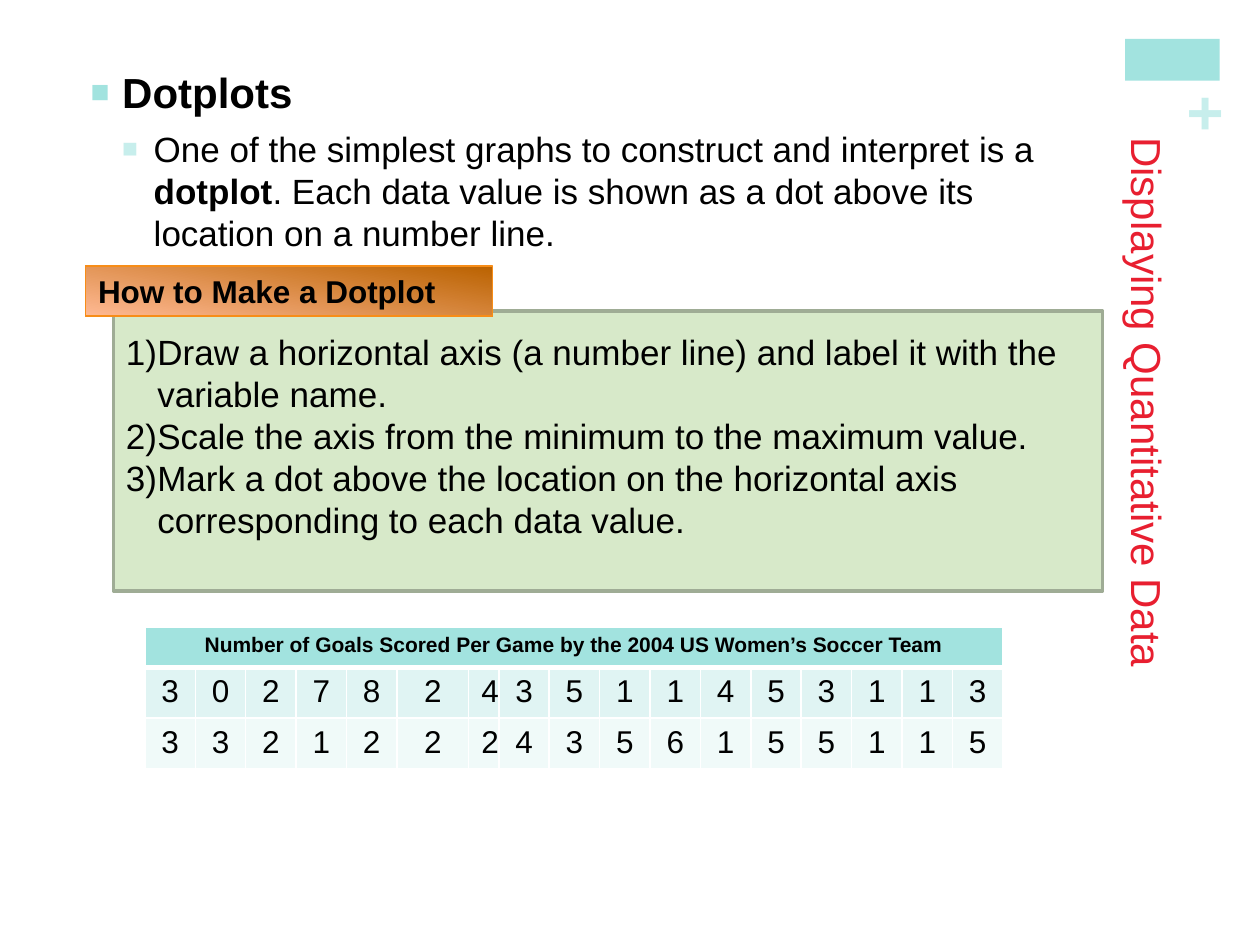
from lxml import etree
from pptx import Presentation
from pptx.dml.color import RGBColor
from pptx.enum.shapes import MSO_SHAPE
from pptx.enum.text import MSO_ANCHOR, MSO_AUTO_SIZE, PP_ALIGN
from pptx.oxml.ns import qn
from pptx.util import Pt

PX = 9144
FONT = "Arial"
RECT = MSO_SHAPE.RECTANGLE
LEFT, MID = PP_ALIGN.LEFT, PP_ALIGN.CENTER
TOP, CENTER = MSO_ANCHOR.TOP, MSO_ANCHOR.MIDDLE
FIXED = MSO_AUTO_SIZE.NONE

HEX = {
    "black": "000000", "white": "FFFFFF", "red": "E81F30",
    "teal": "A2E3DF", "pale": "C7EEEC", "band": "E0F4F3", "mist": "F0FAF9",
    "green": "D7E9C9", "moss": "9FAC95",
    "rust": "BA6200", "peach": "FFB993", "orange": "F78D18",
}
STEPS = [
    "Draw a horizontal axis (a number line) and label it with the variable name.",
    "Scale the axis from the minimum to the maximum value.",
    "Mark a dot above the location on the horizontal axis corresponding to each data value.",
]
GOALS = ["30278243511453113", "33212224356155115"]


def rgb(name):
    return RGBColor.from_string(HEX[name])


def emu(*box):
    return [n * PX for n in box]


def place(shape, box):
    shape.left, shape.top, shape.width, shape.height = emu(*box)


def style(para, size, color="black", bold=False, align=LEFT):
    para.alignment = align
    for run in para.runs:
        font = run.font
        font.name, font.size, font.bold = FONT, Pt(size), bold
        font.color.rgb = rgb(color)


def frame(shape, anchor):
    text = shape.text_frame
    text.word_wrap = True
    text.auto_size = FIXED
    text.vertical_anchor = anchor
    return text


def block(slide, box, fill=None, line=None, width=1):
    shape = slide.shapes.add_shape(RECT, *emu(*box))
    shape.shadow.inherit = False
    if fill:
        shape.fill.solid()
        shape.fill.fore_color.rgb = rgb(fill)
    if line:
        shape.line.color.rgb = rgb(line)
        shape.line.width = Pt(width)
    else:
        shape.line.fill.background()
    return shape


def indent(para, left, hang):
    props = para._p.get_or_add_pPr()
    props.set("marL", str(left * PX))
    props.set("indent", str(-hang * PX))
    return props


def bullet(para, left, color):
    props = indent(para, left, 25)
    tint = etree.SubElement(props, qn("a:buClr"))
    etree.SubElement(tint, qn("a:srgbClr"), val=HEX[color])
    etree.SubElement(props, qn("a:buSzPct"), val="75000")
    etree.SubElement(props, qn("a:buFont"), typeface=FONT)
    etree.SubElement(props, qn("a:buChar"), char="■")


def corner(slide, x, y):
    block(slide, (x, y, 75, 33), "teal")
    mark = slide.shapes.add_textbox(*emu(x + 47, y + 30, 28, 61))
    mark.rotation = 270
    text = mark.text_frame
    text.margin_left = text.margin_right = text.margin_top = text.margin_bottom = 0
    text.text = "+"
    style(text.paragraphs[0], 36, "pale", True)


def heading(slide, box):
    title = slide.shapes.title
    place(title, box)
    text = frame(title, CENTER)
    text._txBody.bodyPr.set("vert", "eaVert")
    text.text = "Displaying Quantitative Data"
    style(text.paragraphs[0], 24, "red")


def intro(slide, box):
    body = slide.placeholders[1]
    place(body, box)
    text = frame(body, TOP)
    text.text = "Dotplots"
    head = text.paragraphs[0]
    head.space_before = Pt(0)
    style(head, 24, bold=True)
    bullet(head, 25, "teal")
    note = text.add_paragraph()
    note.level = 1
    note.space_before = Pt(6)
    for part in ("One of the simplest graphs to construct and interpret is a ",
                 "dotplot",
                 ". Each data value is shown as a dot above its location on a number line."):
        note.add_run().text = part
    style(note, 20)
    note.runs[1].font.bold = True
    bullet(note, 50, "pale")


def method(slide, x, y):
    panel = block(slide, (x + 22, y + 36, 785, 222), "green", "moss", 2)
    text = frame(panel, TOP)
    text.margin_top = 15 * PX
    text.text = "\n".join(STEPS)
    for para in text.paragraphs:
        style(para, 20)
        props = indent(para, 25, 25)
        etree.SubElement(props, qn("a:buFont"), typeface=FONT)
        etree.SubElement(props, qn("a:buAutoNum"), type="arabicParenR")

    tag = block(slide, (x, y, 323, 40), line="orange")
    tag.fill.gradient()
    tag.fill.gradient_angle = 260
    for stop, name in zip(tag.fill.gradient_stops, ("rust", "peach")):
        stop.color.rgb = rgb(name)
    text = frame(tag, CENTER)
    text.text = "How to Make a Dotplot"
    style(text.paragraphs[0], 18, bold=True)


def border(cell, top=1, base=1):
    props = cell._tc.get_or_add_tcPr()
    sides = (("L", 1), ("R", 1), ("T", top), ("B", base))
    for spot, (side, width) in enumerate(sides):
        line = etree.Element(qn("a:ln" + side), w=str(Pt(width)))
        fill = etree.SubElement(line, qn("a:solidFill"))
        etree.SubElement(fill, qn("a:srgbClr"), val=HEX["white"])
        props.insert(spot, line)


def entry(cell, words, fill, size, bold=False):
    cell.fill.solid()
    cell.fill.fore_color.rgb = rgb(fill)
    cell.text = words
    style(cell.text_frame.paragraphs[0], size, bold=bold, align=MID)


def scores(slide, x, y):
    cols = [40] * 5 + [57, 23] + [40] * 10
    rows = [32, 40, 40]
    box = (x, y, sum(cols), sum(rows))
    table = slide.shapes.add_table(len(rows), len(cols), *emu(*box)).table
    for col, width in zip(table.columns, cols):
        col.width = width * PX
    for row, height in zip(table.rows, rows):
        row.height = height * PX
    head = table.cell(0, 0)
    head.merge(table.cell(0, len(cols) - 1))
    entry(head, "Number of Goals Scored Per Game by the 2004 US Women’s Soccer Team",
          "teal", 12, True)
    for cell in table.rows[0].cells:
        border(cell, base=3)
    for r, (goals, fill) in enumerate(zip(GOALS, ("band", "mist")), 1):
        for c, goal in enumerate(goals):
            cell = table.cell(r, c)
            entry(cell, goal, fill, 18)
            border(cell, top=3 if r == 1 else 1)


def main():
    deck = Presentation()
    deck.slide_width, deck.slide_height = emu(1000, 750)
    slide = deck.slides.add_slide(deck.slide_layouts[1])
    corner(slide, 893, 31)
    heading(slide, (874, 104, 74, 566))
    intro(slide, (62, 48, 807, 160))
    method(slide, 68, 211)
    scores(slide, 115, 498)
    deck.save("out.pptx")


if __name__ == "__main__":
    main()
